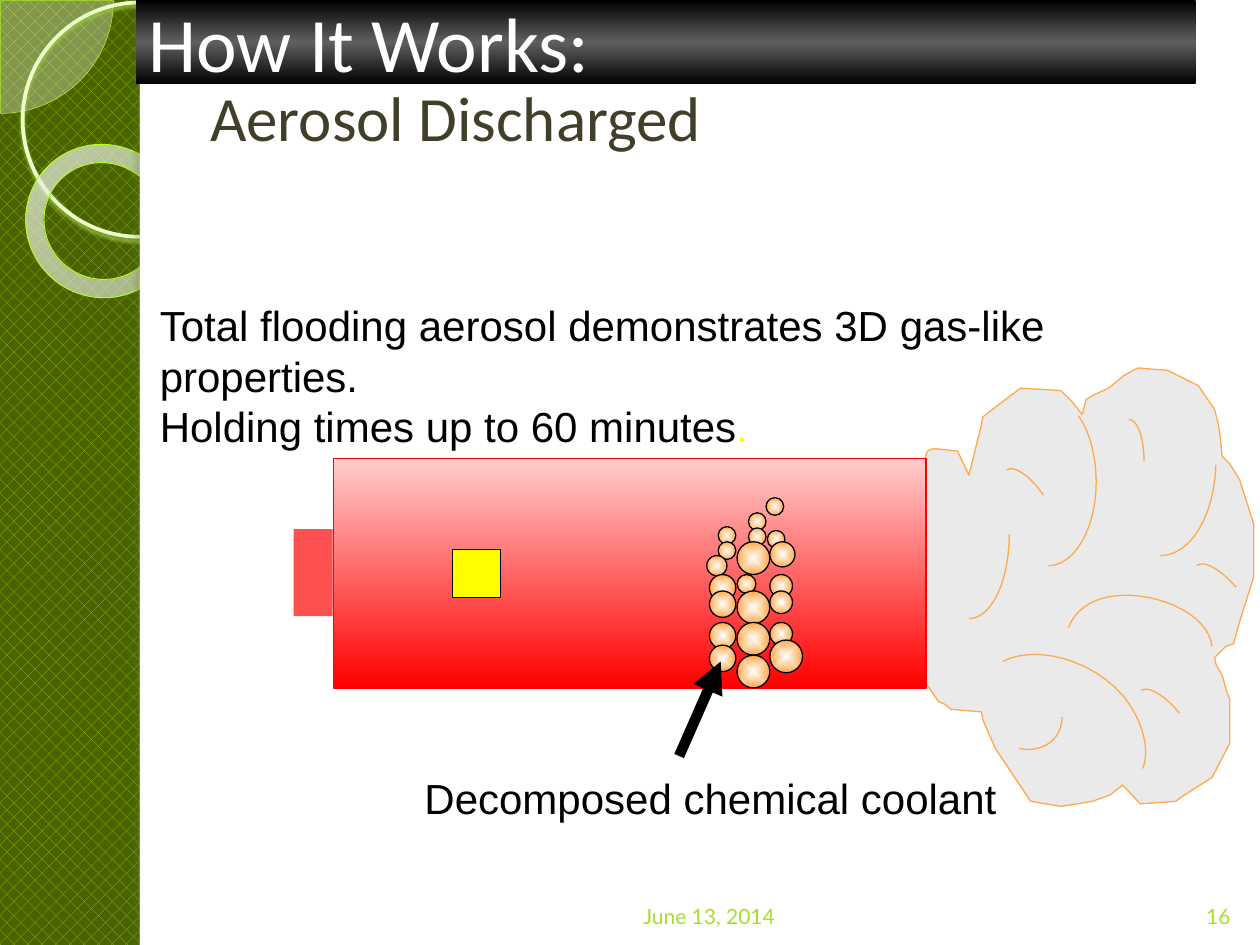
from lxml import etree
from pptx import Presentation
from pptx.dml.color import RGBColor
from pptx.enum.dml import MSO_PATTERN
from pptx.enum.shapes import MSO_CONNECTOR, MSO_SHAPE
from pptx.enum.text import MSO_ANCHOR, MSO_AUTO_SIZE, PP_ALIGN
from pptx.oxml.ns import qn
from pptx.util import Inches, Pt

RECT, OVAL, DONUT, PIE = MSO_SHAPE.RECTANGLE, MSO_SHAPE.OVAL, MSO_SHAPE.DONUT, MSO_SHAPE.PIE
LEFT, CENTER, RIGHT = PP_ALIGN.LEFT, PP_ALIGN.CENTER, PP_ALIGN.RIGHT
TOP, MIDDLE, BOTTOM = MSO_ANCHOR.TOP, MSO_ANCHOR.MIDDLE, MSO_ANCHOR.BOTTOM
GROW, FIXED = MSO_AUTO_SIZE.SHAPE_TO_FIT_TEXT, MSO_AUTO_SIZE.NONE
STRAIGHT, DOTS = MSO_CONNECTOR.STRAIGHT, MSO_PATTERN.PERCENT_25

BLACK, WHITE, ORANGE, YELLOW, LIME = "000000", "FFFFFF", "FFA94A", "FFFF00", "A4DF29"

CLOUD_EDGE = [
    (5, 97), (6, 78), (9, 72), (11, 66), (16, 64), (35, 66), (44, 85), (54, 45), (55, 39),
    (60, 35), (85, 16), (117, 18), (126, 27), (134, 37), (137, 25), (142, 22), (155, 16),
    (167, 6), (178, 0), (202, 2), (226, 14), (239, 33), (242, 45), (243, 51), (245, 70),
    (251, 76), (259, 89), (270, 124), (270, 166), (259, 201), (254, 219), (248, 221),
    (239, 230), (240, 235), (245, 244), (249, 258), (251, 263), (251, 298), (237, 325),
    (215, 339), (208, 344), (180, 346), (166, 331), (156, 339), (142, 344), (117, 348),
    (93, 344), (69, 308), (65, 302), (55, 279), (54, 273), (30, 271), (25, 267), (20, 265),
    (11, 252), (5, 240), (1, 234), (5, 215)]
CLOUD_FOLDS = [
    [(107, 157), (128, 157), (145, 127), (145, 91), (145, 70), (140, 51), (131, 38)],
    [(196, 149), (220, 149), (239, 117), (240, 77)],
    [(71, 233), (95, 220), (141, 230), (167, 261), (182, 280), (188, 303), (182, 318)],
    [(123, 206), (131, 186), (153, 178), (179, 181), (211, 185), (235, 202), (237, 221)],
    [(44, 199), (62, 199), (76, 169), (76, 132)],
    [(183, 74), (183, 56), (178, 41), (171, 41)],
    [(103, 101), (93, 86), (80, 77), (74, 81)],
    [(211, 274), (200, 260), (186, 252), (181, 256)],
    [(118, 277), (118, 295), (102, 306), (84, 302)],
    [(256, 174), (244, 160), (230, 152), (225, 157)]]
COOLANT = [
    (337, 54, 14), (361, 43, 14), (375, 31, 14), (337, 66, 14), (361, 55, 14), (376, 57, 14),
    (328, 77, 16), (352, 66, 26), (378, 66, 20), (330, 92, 21), (352, 92, 15), (378, 92, 18),
    (330, 105, 21), (352, 105, 26), (378, 105, 18), (330, 130, 21), (352, 130, 26),
    (378, 130, 18), (330, 148, 21), (352, 156, 26), (378, 144, 26)]


def color(value):
    """Turn a hex string into a colour."""
    return RGBColor.from_string(value)


def child(parent, tag, **attributes):
    """Append a drawing element with the given attributes."""
    return etree.SubElement(parent, qn(f"a:{tag}"), {k: str(v) for k, v in attributes.items()})


def style(shape, fill=None, line=None, width=0.75):
    """Set plain fill and line, without a shadow."""
    shape.shadow.inherit = False
    if fill:
        shape.fill.solid()
        shape.fill.fore_color.rgb = color(fill)
    else:
        shape.fill.background()
    if line:
        shape.line.color.rgb = color(line)
        shape.line.width = Pt(width)
    else:
        shape.line.fill.background()
    return shape


def add_shape(shapes, kind, x, y, w, h, *look):
    """Add a styled preset shape, measured in inches."""
    return style(shapes.add_shape(kind, Inches(x), Inches(y), Inches(w), Inches(h)), *look)


def shade(shape, stops, path=None, focus=(50, 50, 50, 50)):
    """Fill with a vertical gradient, or with a path gradient around a focus."""
    shape.fill.gradient()
    grad = shape._element.spPr.find(qn("a:gradFill"))
    for part in list(grad):
        grad.remove(part)
    stop_list = child(grad, "gsLst")
    for position, value, alpha in stops:
        stop = child(stop_list, "gs", pos=position * 1000)
        child(child(stop, "srgbClr", val=value), "alpha", val=alpha * 1000)
    if path:
        sides = {side: part * 1000 for side, part in zip("ltrb", focus)}
        child(child(grad, "path", path=path), "fillToRect", **sides)
    else:
        child(grad, "lin", ang=90 * 60000, scaled=0)


def cast_shadow(shape, value, alpha, blur, distance, angle):
    """Give a shape an outer shadow."""
    effects = shape._element.spPr.find(qn("a:effectLst"))
    outer = child(effects, "outerShdw", blurRad=Pt(blur), dist=Pt(distance),
                  dir=angle * 60000, rotWithShape=0)
    child(child(outer, "srgbClr", val=value), "alpha", val=alpha * 1000)


def write(shape, paragraphs, size, font, align=LEFT, anchor=TOP, wrap=True, fit=FIXED):
    """Write paragraphs of (text, colour) runs."""
    frame = shape.text_frame
    frame.word_wrap, frame.auto_size, frame.vertical_anchor = wrap, fit, anchor
    for index, runs in enumerate(paragraphs):
        paragraph = frame.add_paragraph() if index else frame.paragraphs[0]
        paragraph.alignment = align
        for text, value in runs:
            run = paragraph.add_run()
            run.text = text
            run.font.size, run.font.name = Pt(size), font
            run.font.color.rgb = color(value)


def add_text(shapes, x, y, w, h, *text, **options):
    """Add a text box, measured in inches."""
    write(shapes.add_textbox(Inches(x), Inches(y), Inches(w), Inches(h)), *text, **options)


def curve(points, steps=12):
    """Sample a chain of cubic curves."""
    samples = [points[0]]
    for i in range(0, len(points) - 1, 3):
        for t in (step / steps for step in range(1, steps + 1)):
            weights = ((1 - t) ** 3, 3 * t * (1 - t) ** 2, 3 * t * t * (1 - t), t ** 3)
            samples.append(tuple(sum(weight * point[axis] for weight, point
                                     in zip(weights, points[i:i + 4])) for axis in (0, 1)))
    return samples


def add_outline(shapes, x, y, points, close, fill=None):
    """Draw points given in hundredths of an inch from a corner."""
    spots = [(Inches(x + px / 100), Inches(y + py / 100)) for px, py in points]
    builder = shapes.build_freeform(*spots[0])
    builder.add_line_segments(spots[1:], close=close)
    style(builder.convert_to_shape(), fill, ORANGE)


def draw_side_panel(slide, x, y, w, h, panel):
    """Draw the patterned side panel with its rings and the white page."""
    slide.background.fill.patterned()
    backdrop = slide.background.fill
    backdrop.pattern = DOTS
    backdrop.fore_color.rgb, backdrop.back_color.rgb = color("94C600"), color("4A6300")
    quarter = add_shape(slide.shapes, PIE, x - 0.89, y - 0.89, 1.79, 1.79, "F7FFEC", "BDFF37", 0.25)
    quarter.adjustments[0], quarter.adjustments[1] = 0, 54.02
    tint = quarter._element.spPr.find(qn("a:solidFill"))[0]
    child(tint, "alpha", val=33000)
    circle = add_shape(slide.shapes, OVAL, x + 0.18, y + 0.02, 1.86, 1.86, None, "EAFFCB", 2.15)
    cast_shadow(circle, "9DCA42", 85, 2, 2, 90)
    ring = add_shape(slide.shapes, DONUT, x + 0.2, y + 1.15, 1.23, 1.21, None, "B6FC25", 0.58)
    ring.adjustments[0], ring.rotation = 0.12, 38.6
    shade(ring, [(0, "FAFFF2", 70), (70, "FCFFF9", 55), (100, "C1FF40", 60)],
          "circle", (-408, -50, 508, 150))
    cast_shadow(ring, "526F16", 35, 1, 1.2, 75)
    add_shape(slide.shapes, RECT, x + panel, y, w - panel, h, WHITE)
    edge = add_shape(slide.shapes, RECT, x + panel, y, 0.08, h, WHITE)
    cast_shadow(edge, "657B39", 25, 3, 3, 180)


def draw_cloud(slide, x, y):
    """Draw the aerosol cloud and its folds."""
    cloud = slide.shapes.add_group_shape().shapes
    add_outline(cloud, x, y, CLOUD_EDGE, True, "EAEAEA")
    for fold in CLOUD_FOLDS:
        add_outline(cloud, x, y, curve(fold), False)


def draw_canister(slide, x, y, w, h):
    """Draw the canister with its cap, igniter and coolant."""
    canister = slide.shapes.add_group_shape().shapes
    cap = 0.32
    body = add_shape(canister, RECT, x + cap, y, w - cap, h, None, "FF0000")
    shade(body, [(0, "FFCCCC", 100), (100, "FF0000", 100)])
    add_shape(canister, RECT, x, y + 0.56, cap - 0.01, 0.69, "FF5050")
    for left, top, size in COOLANT:
        pellet = add_shape(canister, OVAL, x + left / 100, y + top / 100,
                           size / 100, size / 100, None, BLACK)
        shade(pellet, [(0, WHITE, 100), (100, ORANGE, 100)], "shape")
    add_shape(canister, RECT, x + 1.26, y + 0.72, 0.38, 0.38, YELLOW, BLACK)


def draw_coolant_label(slide, x, y, w, h):
    """Draw the coolant caption at the foot of the box and its arrow."""
    label = slide.shapes.add_group_shape().shapes
    arrow = label.add_connector(STRAIGHT, Inches(x + 2.12), Inches(y + 0.75),
                                Inches(x + 2.45), Inches(y))
    arrow.line.color.rgb, arrow.line.width = color(BLACK), Pt(6)
    child(arrow.line._get_or_add_ln(), "tailEnd", type="triangle")
    child(arrow._element.spPr, "effectLst")
    add_text(label, x, y + h - 0.5, w, 0.5, [[("Decomposed chemical coolant", BLACK)]],
             24, "Arial", wrap=False, fit=GROW)


def draw_header(slide, x, y, w, h):
    """Draw the dark header bar."""
    header = add_shape(slide.shapes, RECT, x, y, w, h)
    shade(header, [(0, BLACK, 100), (50, "5F5F5F", 100), (100, BLACK, 100)])
    write(header, [[("How It Works:", WHITE)]], 44, "Calibri", anchor=MIDDLE, wrap=False)


def draw_footer(slide, x, y, w, h):
    """Write the date and the slide number at the two ends of the box."""
    add_text(slide.shapes, x, y, 2.33, h, [[("June 13, 2014", LIME)]], 12, "Lato", RIGHT, BOTTOM)
    add_text(slide.shapes, x + w - 0.5, y, 0.5, h, [[("16", LIME)]], 12, "Lato", CENTER, BOTTOM)


def main():
    """Build the slide and save it."""
    deck = Presentation()
    deck.slide_width, deck.slide_height = Inches(10), Inches(7.5)
    slide = deck.slides.add_slide(deck.slide_layouts[6])
    draw_side_panel(slide, 0, 0, 10, 7.5, 1.11)
    draw_cloud(slide, 7.25, 2.92)
    add_text(slide.shapes, 1.57, 0.3, 8.2, 1.25, [[("Aerosol Discharged", "413F2A")]],
             36, "Calibri", anchor=MIDDLE)
    draw_canister(slide, 2.33, 3.64, 5.02, 1.82)
    add_text(slide.shapes, 1.17, 2.33, 8.33, 1.31,
             [[("Total flooding aerosol demonstrates 3D gas-like properties.", BLACK)],
              [("Holding times up to 60 minutes", BLACK), (".", YELLOW)]], 24, "Arial", fit=GROW)
    draw_coolant_label(slide, 3.27, 5.25, 4.75, 1.33)
    draw_header(slide, 1.08, 0, 8.41, 0.67)
    draw_footer(slide, 3.92, 6.9, 6, 0.52)
    deck.save("out.pptx")


if __name__ == "__main__":
    main()
